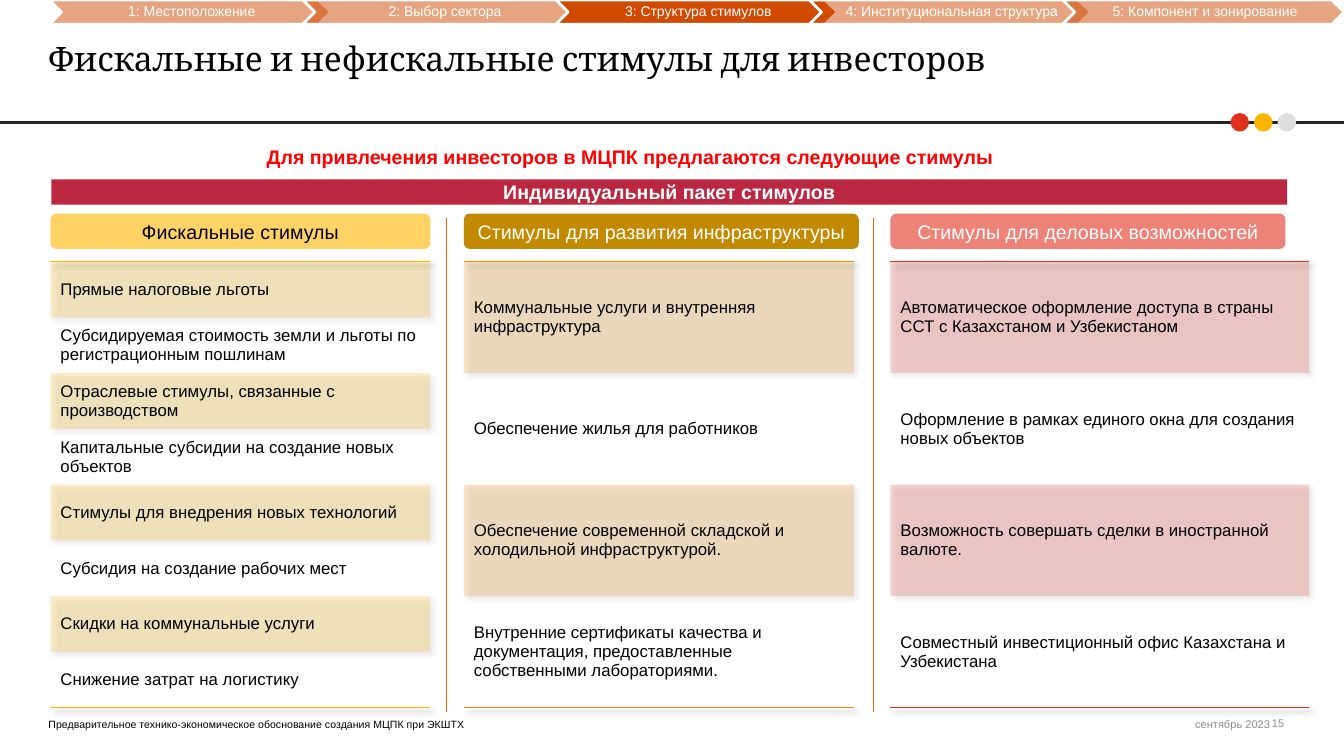
from lxml import etree
from pptx import Presentation
from pptx.dml.color import RGBColor
from pptx.enum.shapes import MSO_CONNECTOR, MSO_SHAPE
from pptx.enum.text import MSO_ANCHOR, PP_ALIGN
from pptx.oxml import parse_xml
from pptx.oxml.ns import nsdecls, qn
from pptx.util import Pt

COLORS = {
    "black": "000000", "white": "FFFFFF", "rule": "232323", "gray": "8C8C8C",
    "heading": "FF0000", "banner": "BB2740", "step": "D04A02", "divider": "DC6900",
    "red": "E0301E", "yellow": "FFB600", "orange": "EB8C00", "silver": "DEDEDE",
    "light yellow": "FFD366", "ochre": "C28A00", "pink": "ED8278",
}
TITLE = "Фискальные и нефискальные стимулы для инвесторов"
HEADING = "Для привлечения инвесторов в МЦПК предлагаются следующие стимулы"
BANNER = "Индивидуальный пакет стимулов"
FOOTER = "Предварительное технико-экономическое обоснование создания МЦПК при ЭКШТХ"
DATE = "сентябрь 2023"
PAGE = "15"
STEPS = ["1: Местоположение", "2: Выбор сектора", "3: Структура стимулов",
         "4: Институциональная структура", "5: Компонент и зонирование"]
CURRENT_STEP = 2
DOTS = ["red", "yellow", "silver"]
COLUMNS = [
    {"title": "Фискальные стимулы", "left": 36, "title_width": 271.5, "width": 271.5,
     "title_fill": "light yellow", "title_color": "black", "accent": "yellow",
     "items": ["Прямые налоговые льготы",
               "Субсидируемая стоимость земли и льготы по регистрационным пошлинам",
               "Отраслевые стимулы, связанные с производством",
               "Капитальные субсидии на создание новых объектов",
               "Стимулы для внедрения новых технологий",
               "Субсидия на создание рабочих мест",
               "Скидки на коммунальные услуги",
               "Снижение затрат на логистику"]},
    {"title": "Стимулы для развития инфраструктуры", "left": 331.3, "title_width": 282.2,
     "width": 278.8, "title_fill": "ochre", "title_color": "white", "accent": "orange",
     "items": ["Коммунальные услуги и внутренняя инфраструктура",
               "Обеспечение жилья для работников",
               "Обеспечение современной складской и холодильной инфраструктурой.",
               "Внутренние сертификаты качества и документация, предоставленные "
               "собственными лабораториями."]},
    {"title": "Стимулы для деловых возможностей", "left": 636, "title_width": 282.2,
     "width": 299.3, "title_fill": "pink", "title_color": "white", "accent": "red",
     "items": ["Автоматическое оформление доступа в страны ССТ с Казахстаном и Узбекистаном",
               "Оформление в рамках единого окна для создания новых объектов",
               "Возможность совершать сделки в иностранной валюте.",
               "Совместный инвестиционный офис Казахстана и Узбекистана"]},
]
SLIDE_WIDTH, SLIDE_HEIGHT = 960, 540
TABLE_TOP, TABLE_HEIGHT = 187, 318.4
STEP_LEFT, STEP_PITCH, STEP_WIDTH, STEP_HEIGHT = 35.3, 180.95, 200.9, 17.3
DIVIDER_GAP = 12.2

presentation = Presentation()
presentation.slide_width, presentation.slide_height = Pt(SLIDE_WIDTH), Pt(SLIDE_HEIGHT)
slide = presentation.slides.add_slide(presentation.slide_layouts[5])


def rgb(name):
    return RGBColor.from_string(COLORS[name])


def set_transparency(fill, percent_opaque):
    color = fill._xPr.find(qn("a:solidFill"))[0]
    etree.SubElement(color, qn("a:alpha")).set("val", str(percent_opaque * 1000))


def write(shape, text, size, color, align=PP_ALIGN.LEFT, anchor=MSO_ANCHOR.MIDDLE,
          insets=(0, 0, 0, 0), bold=False, font="Arial"):
    frame = shape.text_frame
    frame.text = text
    frame.word_wrap = True
    frame.vertical_anchor = anchor
    frame.margin_left, frame.margin_top, frame.margin_right, frame.margin_bottom = map(Pt, insets)
    paragraph = frame.paragraphs[0]
    paragraph.alignment = align
    style_font(paragraph.runs[0].font, size, color, bold, font)
    return paragraph


def style_font(run_font, size, color, bold=False, name="Arial"):
    run_font.name, run_font.size, run_font.bold = name, Pt(size), bold
    run_font.color.rgb = rgb(color)


def add_shape(kind, box, fill):
    shape = slide.shapes.add_shape(kind, *map(Pt, box))
    shape.shadow.inherit = False
    shape.fill.solid()
    shape.fill.fore_color.rgb = rgb(fill)
    shape.line.fill.background()
    return shape


def add_text(box, text, size, color, **options):
    return write(slide.shapes.add_textbox(*map(Pt, box)), text, size, color, **options)


def add_line(start_x, start_y, end_x, end_y, color, width):
    line = slide.shapes.add_connector(
        MSO_CONNECTOR.STRAIGHT, Pt(start_x), Pt(start_y), Pt(end_x), Pt(end_y))
    line.line.color.rgb, line.line.width = rgb(color), Pt(width)
    etree.SubElement(line._element.spPr, qn("a:effectLst"))


def border_xml(side, color=None):
    paint = f'<a:solidFill><a:srgbClr val="{COLORS[color]}"/></a:solidFill>' if color else "<a:noFill/>"
    return parse_xml(f'<a:{side} {nsdecls("a")} w="12700">{paint}</a:{side}>')


def add_incentive_table(column):
    items = column["items"]
    row_height = Pt(TABLE_HEIGHT / len(items))
    graphic = slide.shapes.add_table(
        len(items), 1, Pt(column["left"]), Pt(TABLE_TOP), Pt(column["width"]), Pt(TABLE_HEIGHT))
    table = graphic.table
    table.first_row = table.horz_banding = False
    table._tbl.tblPr.insert(0, parse_xml(
        f'<a:effectLst {nsdecls("a")}><a:outerShdw blurRad="50800" dist="38100" dir="2700000" '
        'algn="tl" rotWithShape="0"><a:srgbClr val="000000"><a:alpha val="40000"/></a:srgbClr>'
        '</a:outerShdw></a:effectLst>'))
    table._tbl.tblPr.find(qn("a:tableStyleId")).text = "{2D5ABB26-0587-4C30-8999-92F81FD0307C}"
    for index, item in enumerate(items):
        table.rows[index].height = row_height
        cell = table.cell(index, 0)
        cell.text = item
        cell.vertical_anchor = MSO_ANCHOR.MIDDLE
        style_font(cell.text_frame.paragraphs[0].runs[0].font, 12, "black")
        if index % 2:
            cell.fill.background()
        else:
            cell.fill.solid()
            cell.fill.fore_color.rgb = rgb(column["accent"])
            set_transparency(cell.fill, 20)
        edges = {"lnL": None, "lnR": None,
                 "lnT": column["accent"] if index == 0 else None,
                 "lnB": column["accent"] if index == len(items) - 1 else None}
        for position, (side, color) in enumerate(edges.items()):
            cell._tc.get_or_add_tcPr().insert(position, border_xml(side, color))


add_line(0, 87.4, SLIDE_WIDTH, 87.4, "rule", 2)
for index, color in enumerate(DOTS):
    add_shape(MSO_SHAPE.OVAL, (879 + 16.8 * index, 80.8, 13.2, 13.2), color)

title = slide.shapes.title
title.left, title.top, title.width, title.height = Pt(34.6), Pt(27.4), Pt(890), Pt(28.8)
write(title, TITLE, 24, "black", font="Cambria")
add_text((34.6, 103.7, 831, 18), HEADING, 14, "heading", align=PP_ALIGN.CENTER,
         anchor=MSO_ANCHOR.TOP, bold=True)
banner = add_shape(MSO_SHAPE.RECTANGLE, (36.7, 128.2, 882.7, 18), "banner")
write(banner, BANNER, 14, "white", align=PP_ALIGN.CENTER, insets=(7.2, 3.6, 7.2, 3.6), bold=True)

for index, step in enumerate(STEPS):
    left = STEP_LEFT + STEP_PITCH * index
    chevron = add_shape(MSO_SHAPE.CHEVRON, (left, 0, STEP_WIDTH, STEP_HEIGHT), "step")
    chevron.line.color.rgb, chevron.line.width = rgb("white"), Pt(2)
    if index != CURRENT_STEP:
        set_transparency(chevron.fill, 50)
    label = add_text((left + 8.7, 0, 183.6, STEP_HEIGHT), step, 10, "white",
                     align=PP_ALIGN.CENTER, insets=(2.9, 0.7, 0.7, 0.7))
    label.line_spacing = 0.9

for index, column in enumerate(COLUMNS):
    add_incentive_table(column)
    header = add_shape(MSO_SHAPE.ROUNDED_RECTANGLE,
                       (column["left"], 152.6, column["title_width"], 25.2), column["title_fill"])
    write(header, column["title"], 14, column["title_color"], align=PP_ALIGN.CENTER,
          insets=(7.2, 3.6, 7.2, 3.6))
    if index:
        divider = column["left"] - DIVIDER_GAP
        add_line(divider, 155.5, divider, 508.3, "divider", 1)

add_text((34.6, 511.2, 431.3, 10.8), FOOTER, 7.5, "black", anchor=MSO_ANCHOR.BOTTOM)
add_text((768.2, 511.2, 139, 10.8), DATE, 7.9, "gray", align=PP_ALIGN.RIGHT,
         anchor=MSO_ANCHOR.BOTTOM)
add_text((786.2, 511.2, 139, 10.8), PAGE, 7.9, "gray", align=PP_ALIGN.RIGHT,
         insets=(7.9, 4.3, 7.9, 4.3))

presentation.save("out.pptx")
